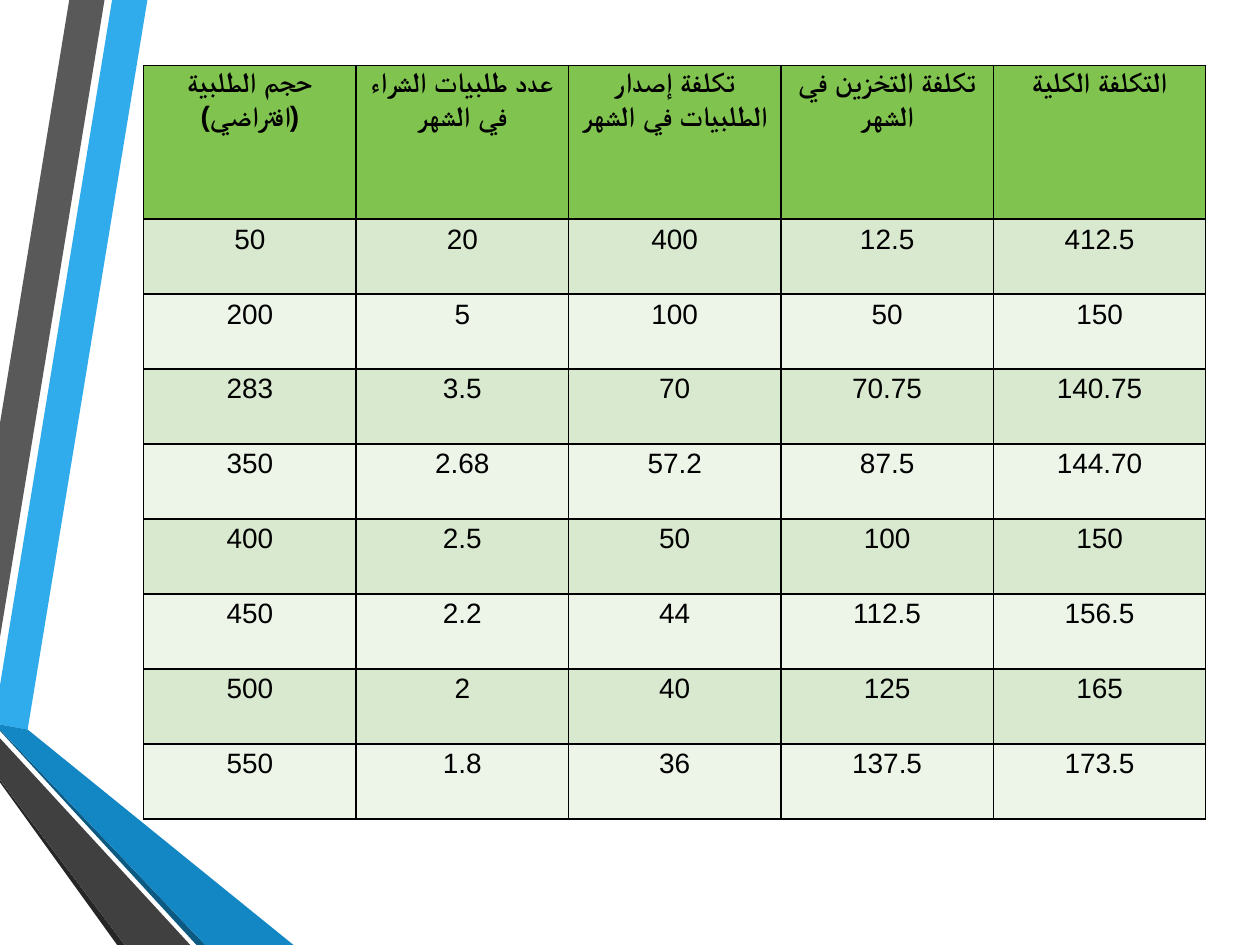
import lxml.etree
import pptx
import pptx.dml.color
import pptx.enum.text
import pptx.oxml.ns
import pptx.util

COLORS = {
    "blue": "30ACEC", "grey": "595959", "black": "262626", "navy": "0C5A82",
    "deep_blue": "1287C3", "charcoal": "404040",
    "header": "80C34F", "band": "D8E9D0", "light_band": "EDF5E9", "ink": "000000",
}
inch = pptx.util.Inches
qn = pptx.oxml.ns.qn


def rgb(name):
    return pptx.dml.color.RGBColor.from_string(COLORS[name])


def add_borders(cell):
    cell_props = cell._tc.get_or_add_tcPr()
    for side in ("lnL", "lnR", "lnT", "lnB"):
        border = lxml.etree.SubElement(cell_props, qn(f"a:{side}"), w=str(pptx.util.Pt(1)))
        fill = lxml.etree.SubElement(border, qn("a:solidFill"))
        lxml.etree.SubElement(fill, qn("a:srgbClr"), val=COLORS["ink"])


prs = pptx.Presentation()
prs.slide_width, prs.slide_height = inch(10), inch(7.5)
slide = prs.slides.add_slide(prs.slide_layouts[6])

# Ribbons folding along the left edge, corner points in inches
ribbons = [
    ("blue", [(0, 5.44), (0, 5.75), (0.22, 5.79), (1.17, 0), (0.89, 0)]),
    ("grey", [(0.83, 0), (0.55, 0), (0, 3.36), (0, 5.06)]),
    ("black", [(0, 6.19), (0, 6.21), (0.93, 7.5), (0.99, 7.5)]),
    ("navy", [(0, 5.79), (0, 5.8), (1.56, 7.5), (1.63, 7.5)]),
    ("deep_blue", [(0, 5.79), (1.63, 7.5), (2.33, 7.5), (0.22, 5.79), (0, 5.75)]),
    ("charcoal", [(0, 6.19), (0.99, 7.5), (1.51, 7.5), (0, 5.86)]),
]
for color, corners in ribbons:
    start, *rest = [(inch(x), inch(y)) for x, y in corners]
    outline = slide.shapes.build_freeform(*start)
    outline.add_line_segments(rest, close=True)
    ribbon = outline.convert_to_shape()
    ribbon.shadow.inherit = False
    ribbon.fill.solid()
    ribbon.fill.fore_color.rgb = rgb(color)
    ribbon.line.fill.background()

# Order size against monthly costs
order_costs = [
    ("حجم الطلبية (افتراضي)", "عدد طلبيات الشراء في الشهر",
     "تكلفة إصدار الطلبيات في الشهر", "تكلفة التخزين في الشهر", "التكلفة الكلية"),
    ("50", "20", "400", "12.5", "412.5"),
    ("200", "5", "100", "50", "150"),
    ("283", "3.5", "70", "70.75", "140.75"),
    ("350", "2.68", "57.2", "87.5", "144.70"),
    ("400", "2.5", "50", "100", "150"),
    ("450", "2.2", "44", "112.5", "156.5"),
    ("500", "2", "40", "125", "165"),
    ("550", "1.8", "36", "137.5", "173.5"),
]
header_height, row_height = inch(1.22), inch(0.595)
cost_table = slide.shapes.add_table(
    len(order_costs), len(order_costs[0]), inch(1.14), inch(0.52),
    inch(8.43), header_height + row_height * (len(order_costs) - 1)).table

for row, values in enumerate(order_costs):
    is_header = row == 0
    cost_table.rows[row].height = header_height if is_header else row_height
    row_color = "header" if is_header else "band" if row % 2 else "light_band"
    for column, value in enumerate(values):
        cell = cost_table.cell(row, column)
        cell.margin_left = cell.margin_right = inch(0.07)
        cell.margin_top = cell.margin_bottom = 0
        add_borders(cell)
        cell.fill.solid()
        cell.fill.fore_color.rgb = rgb(row_color)

        cell.text = value
        paragraph = cell.text_frame.paragraphs[0]
        paragraph.alignment = pptx.enum.text.PP_ALIGN.CENTER
        paragraph.line_spacing = 1.07 if is_header else 1.15
        paragraph._p.get_or_add_pPr().set("rtl", "1")
        font = paragraph.font
        font.name = "Calibri"
        font.size = pptx.util.Pt(16)
        font.bold = is_header
        font.color.rgb = rgb("ink")
        # Right-to-left text takes its typeface from the complex-script font
        lxml.etree.SubElement(font._element, qn("a:cs"), typeface="Arial")

prs.save("out.pptx")
